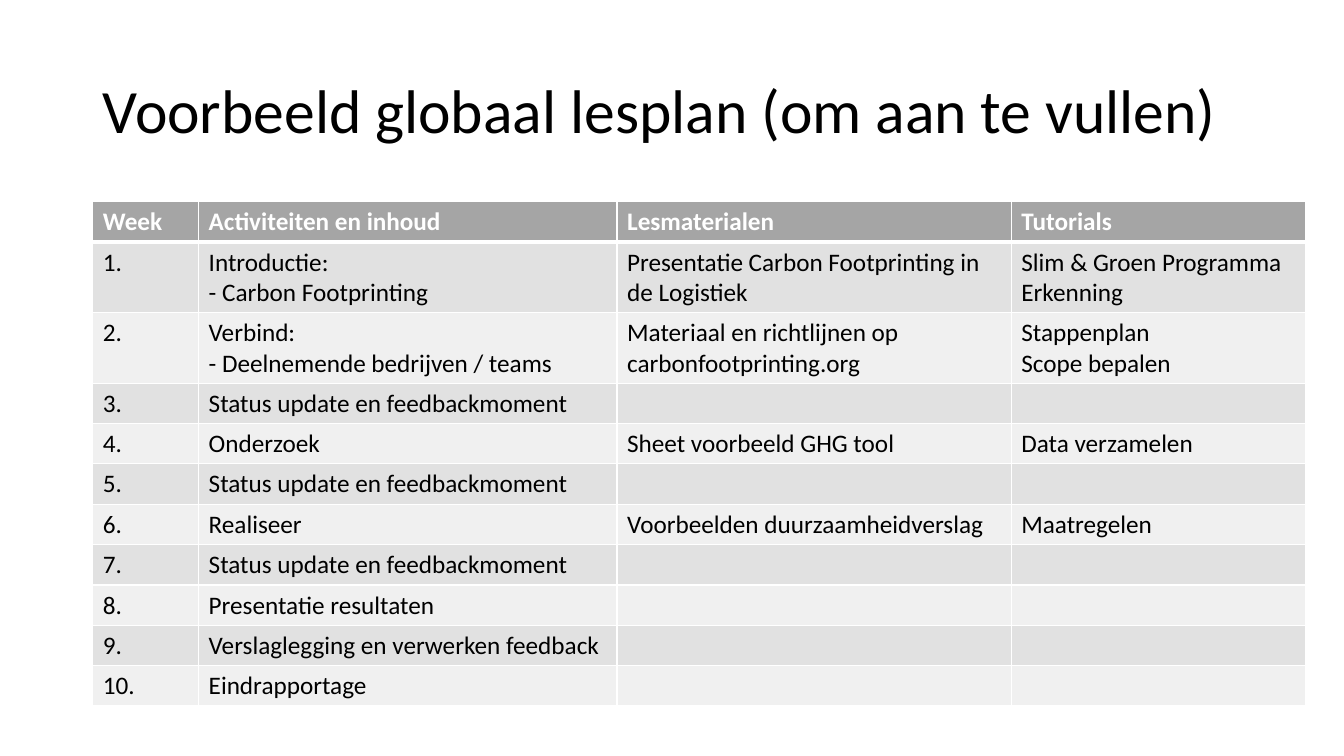
"""Build the lesson plan slide with its weekly table."""
from lxml.etree import SubElement
from pptx import Presentation
from pptx.dml.color import RGBColor
from pptx.enum.text import MSO_ANCHOR
from pptx.oxml.ns import qn
from pptx.util import Inches, Pt

TITLE = "Voorbeeld globaal lesplan (om aan te vullen)"
HEADER = ("Week", "Activiteiten en inhoud", "Lesmaterialen", "Tutorials")
STATUS = ("Status update en feedbackmoment", "", "")
WEEKS = [
    ("Introductie:\n- Carbon Footprinting",
     "Presentatie Carbon Footprinting in de Logistiek",
     "Slim & Groen Programma\nErkenning"),
    ("Verbind:\n- Deelnemende bedrijven / teams",
     "Materiaal en richtlijnen op carbonfootprinting.org",
     "Stappenplan\nScope bepalen"),
    STATUS,
    ("Onderzoek", "Sheet voorbeeld GHG tool", "Data verzamelen"),
    STATUS,
    ("Realiseer", "Voorbeelden duurzaamheidverslag", "Maatregelen"),
    STATUS,
    ("Presentatie resultaten", "", ""),
    ("Verslaglegging en verwerken feedback", "", ""),
    ("Eindrapportage", "", ""),
]
COL_WIDTHS = (1.05, 4.15, 3.91, 2.92)
ROW_HEIGHT = 0.4
FONT = "Calibri"
WHITE, BLACK, GREY = "FFFFFF", "000000", "A5A5A5"
BANDS = ("F0F0F0", "E1E1E1")


def color(value):
    return RGBColor.from_string(value)


def format_text(tf, size, text_color, bold=False):
    for p in tf.paragraphs:
        for r in p.runs:
            r.font.name = FONT
            r.font.size = Pt(size)
            r.font.bold = bold
            r.font.color.rgb = color(text_color)


def add_border(cell, side, width):
    ln = SubElement(cell._tc.get_or_add_tcPr(), qn(f"a:ln{side}"), w=str(Pt(width)))
    fill = SubElement(ln, qn("a:solidFill"))
    SubElement(fill, qn("a:srgbClr"), val=WHITE)


def add_title(s):
    box = s.shapes.add_textbox(Inches(0.92), Inches(0.4), Inches(11.5), Inches(1.45))
    tf = box.text_frame
    tf.word_wrap = True
    tf.vertical_anchor = MSO_ANCHOR.MIDDLE
    tf.text = TITLE
    tf.paragraphs[0].line_spacing = 0.9
    format_text(tf, 44, BLACK)


def add_plan(s):
    rows = [HEADER] + [(f"{n}.", *week) for n, week in enumerate(WEEKS, 1)]
    table = s.shapes.add_table(
        len(rows), len(HEADER), Inches(0.92), Inches(2),
        Inches(sum(COL_WIDTHS)), Inches(ROW_HEIGHT * len(rows))).table
    for col, width in zip(table.columns, COL_WIDTHS):
        col.width = Inches(width)
    for i, row in enumerate(rows):
        table.rows[i].height = Inches(ROW_HEIGHT)
        head = i == 0
        for j, text in enumerate(row):
            cell = table.cell(i, j)
            widths = {"L": 1, "R": 1, "T": 3 if i == 1 else 1, "B": 3 if head else 1}
            for side, width in widths.items():
                add_border(cell, side, width)
            cell.fill.solid()
            cell.fill.fore_color.rgb = color(GREY if head else BANDS[i % 2])
            cell.text_frame.text = text
            format_text(cell.text_frame, 18, WHITE if head else BLACK, head)


def main():
    prs = Presentation()
    prs.slide_width, prs.slide_height = Inches(13.33), Inches(7.5)
    s = prs.slides.add_slide(prs.slide_layouts[6])
    add_title(s)
    add_plan(s)
    prs.save("out.pptx")


if __name__ == "__main__":
    main()
